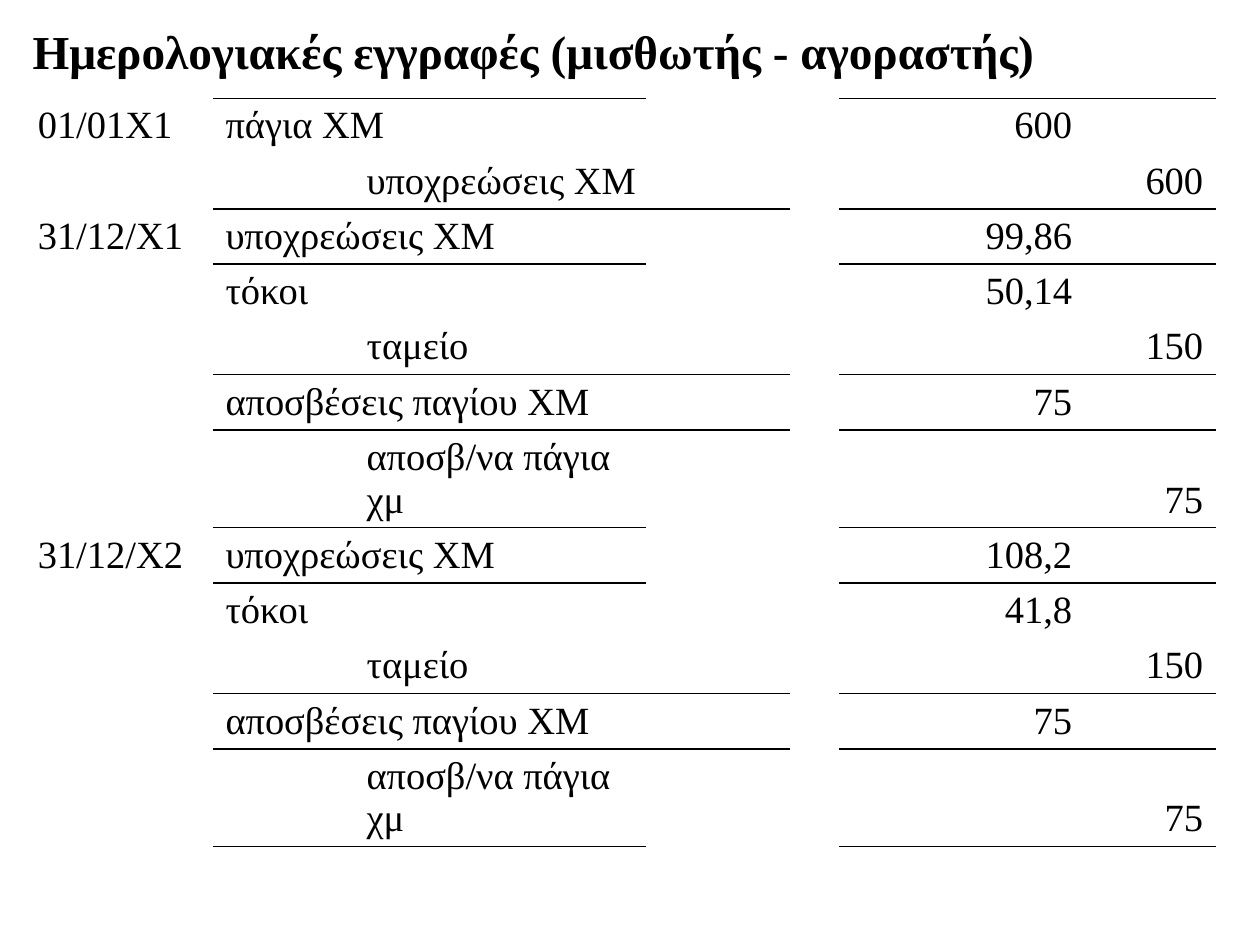
"""Build a slide with the lessee's journal entries for a finance lease."""
from dataclasses import dataclass

from lxml import etree
from pptx import Presentation
from pptx.dml.color import RGBColor
from pptx.enum.text import MSO_ANCHOR, PP_ALIGN
from pptx.oxml.ns import qn
from pptx.util import Inches, Pt

BOTTOM = MSO_ANCHOR.BOTTOM
LEFT, RIGHT = PP_ALIGN.LEFT, PP_ALIGN.RIGHT
FONT = "Times New Roman"
COLORS = {"ink": "000000"}
NO_STYLE = "{2D5ABB26-0587-4C30-8999-92F81FD0307C}"
COL_WIDTHS = (1.49, 1.12, 2.32, 1.14, 0.39, 1.95, 1.04)
ROW_HEIGHT, TALL_HEIGHT = 0.38, 0.68
DATE, DEBIT, CREDIT, DEBIT_SUM, CREDIT_SUM = 0, 1, 2, 5, 6
TOP_COLS = (DEBIT, DEBIT_SUM, CREDIT_SUM)
BOTTOM_COLS = (DEBIT, CREDIT, DEBIT_SUM, CREDIT_SUM)


@dataclass
class Entry:
    """One journal line; span counts the columns its account name covers."""
    account: str
    amount: str
    credit: bool = False
    span: int = 1
    date: str = ""
    tall: bool = False


DEPRECIATION = [
    Entry("αποσβέσεις παγίου ΧΜ", "75", span=3),
    Entry("αποσβ/να πάγια χμ", "75", credit=True, tall=True),
]


def year_entries(date: str, principal: str, interest: str) -> list[Entry]:
    """Return the instalment and depreciation lines of one year."""
    return [
        Entry("υποχρεώσεις ΧΜ", principal, span=2, date=date),
        Entry("τόκοι", interest),
        Entry("ταμείο", "150", credit=True),
        *DEPRECIATION,
    ]


ENTRIES = [
    Entry("πάγια ΧΜ", "600", span=2, date="01/01Χ1"),
    Entry("υποχρεώσεις ΧΜ", "600", credit=True, span=2),
    *year_entries("31/12/Χ1", "99,86", "50,14"),
    *year_entries("31/12/Χ2", "108,2", "41,8"),
]


def style_paragraph(p, size: float, bold: bool = False) -> None:
    """Apply the slide's font to a paragraph."""
    p.font.name = FONT
    p.font.size = Pt(size)
    p.font.bold = bold
    p.font.color.rgb = RGBColor.from_string(COLORS["ink"])


def write_cell(cell, text: str, align=LEFT) -> None:
    """Write bottom-anchored text into a cell."""
    cell.vertical_anchor = BOTTOM
    p = cell.text_frame.paragraphs[0]
    p.text = text
    p.alignment = align
    style_paragraph(p, 22)


def add_border(cell, side: str) -> None:
    """Rule one side of a cell, ahead of its fill."""
    tc_pr = cell._tc.get_or_add_tcPr()
    ln = etree.Element(qn(f"a:{side}"), w=str(Pt(1)))
    fill = etree.SubElement(ln, qn("a:solidFill"))
    etree.SubElement(fill, qn("a:srgbClr"), val=COLORS["ink"])
    fill_at = tc_pr.index(tc_pr.find(qn("a:noFill")))
    tc_pr.insert(fill_at, ln)


def add_title(slide, text: str) -> None:
    """Add the slide heading."""
    sp = slide.shapes.add_textbox(Inches(0.16), Inches(0.13), Inches(9.61), Inches(0.56))
    tf = sp.text_frame
    tf.word_wrap = True
    p = tf.paragraphs[0]
    p.text = text
    style_paragraph(p, 27, bold=True)


def add_journal(slide, entries: list[Entry]) -> None:
    """Add the journal table, ruled around each balanced entry."""
    heights = [TALL_HEIGHT if e.tall else ROW_HEIGHT for e in entries]
    frame = slide.shapes.add_table(
        len(entries), len(COL_WIDTHS), Inches(0.2), Inches(0.78),
        Inches(sum(COL_WIDTHS)), Inches(sum(heights)))
    table = frame.table
    table.first_row = table.horz_banding = False
    table._tbl.tblPr.find(qn("a:tableStyleId")).text = NO_STYLE
    for column, width in zip(table.columns, COL_WIDTHS):
        column.width = Inches(width)
    for row, height in zip(table.rows, heights):
        row.height = Inches(height)
    for cell in table.iter_cells():
        cell.fill.background()

    opens = True
    for r, entry in enumerate(entries):
        account_col = CREDIT if entry.credit else DEBIT
        account = table.cell(r, account_col)
        if entry.span > 1:
            account.merge(table.cell(r, account_col + entry.span - 1))
        if entry.date:
            write_cell(table.cell(r, DATE), entry.date)
        write_cell(account, entry.account)
        sum_col = CREDIT_SUM if entry.credit else DEBIT_SUM
        write_cell(table.cell(r, sum_col), entry.amount, RIGHT)
        for col in TOP_COLS if opens else ():
            add_border(table.cell(r, col), "lnT")
        for col in BOTTOM_COLS if entry.credit else ():
            add_border(table.cell(r, col), "lnB")
        opens = entry.credit


def main() -> None:
    """Create and save the presentation."""
    prs = Presentation()
    prs.slide_width, prs.slide_height = Inches(10), Inches(7.5)
    slide = prs.slides.add_slide(prs.slide_layouts[6])
    add_journal(slide, ENTRIES)
    add_title(slide, "Ημερολογιακές εγγραφές (μισθωτής - αγοραστής)")
    prs.save("out.pptx")


if __name__ == "__main__":
    main()
